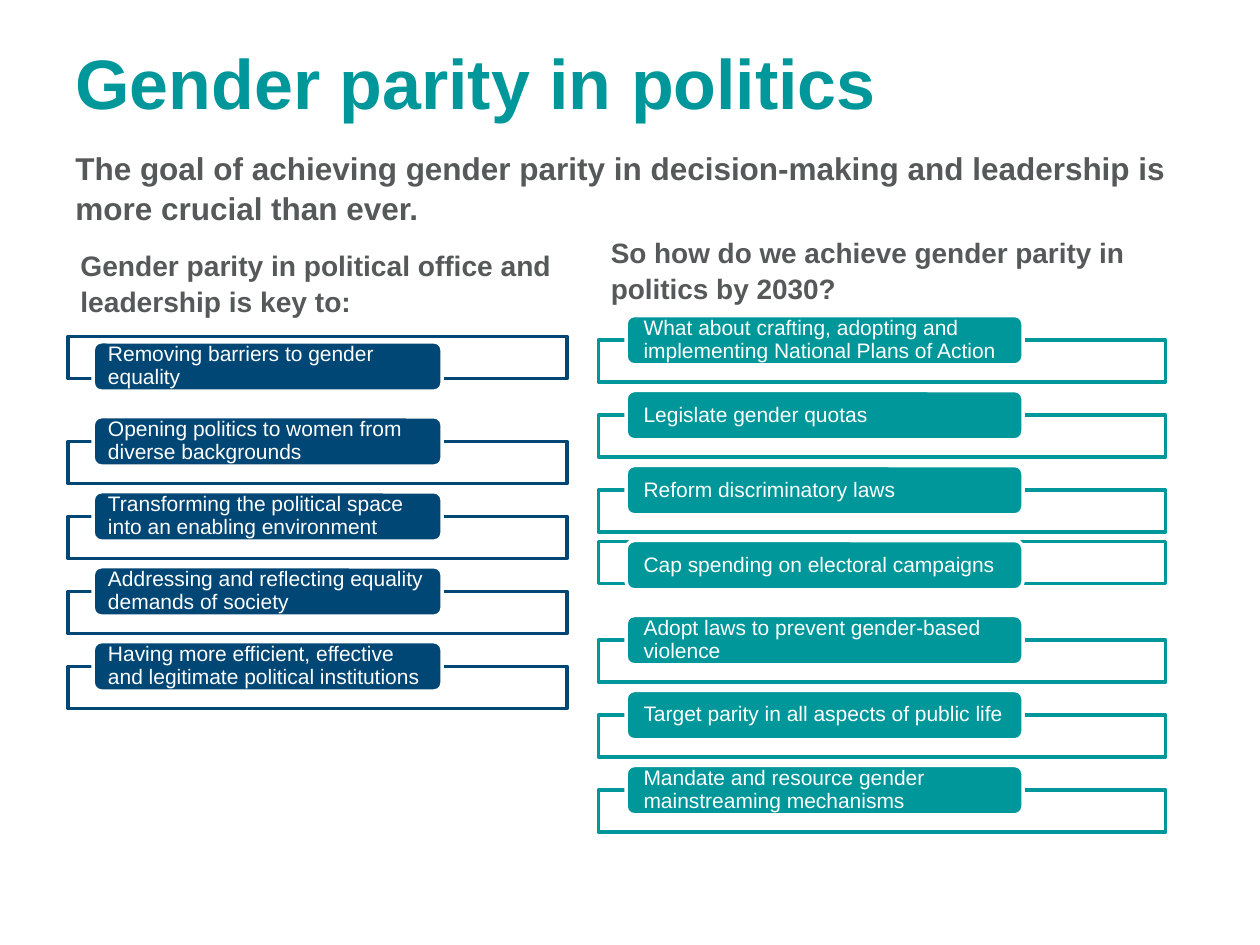
from lxml import etree
from pptx import Presentation
from pptx.dml.color import RGBColor
from pptx.enum.shapes import MSO_SHAPE
from pptx.enum.text import MSO_ANCHOR, PP_ALIGN
from pptx.oxml.ns import qn
from pptx.util import Pt

RECT, ROUNDED = MSO_SHAPE.RECTANGLE, MSO_SHAPE.ROUNDED_RECTANGLE
TOP, MIDDLE = MSO_ANCHOR.TOP, MSO_ANCHOR.MIDDLE
LEFT = PP_ALIGN.LEFT
TEAL = RGBColor(0x00, 0x97, 0x9B)
NAVY = RGBColor(0x00, 0x47, 0x75)
GREY = RGBColor(0x56, 0x59, 0x59)
WHITE = RGBColor(0xFF, 0xFF, 0xFF)


def write(sp, text, size, color, bold=True, anchor=TOP, spacing=1.05, side=7.2, top=3.6, bottom=3.6):
    tf = sp.text_frame
    tf.word_wrap = True
    tf.vertical_anchor = anchor
    tf.margin_left = tf.margin_right = Pt(side)
    tf.margin_top, tf.margin_bottom = Pt(top), Pt(bottom)
    p = tf.paragraphs[0]
    p.alignment = LEFT
    p.line_spacing = spacing
    p.space_before = Pt(0)
    r = p.add_run()
    r.text = text
    r.font.name = "Arial"
    r.font.size = Pt(size)
    r.font.bold = bold
    r.font.color.rgb = color


def add_box(group, kind, x, y, w, h, fill, line):
    sp = group.shapes.add_shape(kind, Pt(x), Pt(y), Pt(w), Pt(h))
    sp.shadow.inherit = False
    sp.fill.solid()
    sp.fill.fore_color.rgb = fill
    sp.line.color.rgb = line
    sp.line.width = Pt(2)
    return sp


prs = Presentation()
prs.slide_width, prs.slide_height = Pt(720), Pt(540)
s = prs.slides.add_slide(prs.slide_layouts[5])

title = s.shapes.title
title.left, title.top, title.width, title.height = Pt(36), Pt(14.4), Pt(648), Pt(104.4)
write(title, "Gender parity in politics", 40, TEAL, top=6)

headings = [
    ("Gender parity in political office and leadership is key to:", 38.9, 137.5, 295.9, 38.2, 16.1, 3.6),
    ("The goal of achieving gender parity in decision-making and leadership is more crucial than ever.",
     36, 58.3, 648, 94.3, 18, 26),
    ("So how do we achieve gender parity in politics by 2030?", 342, 130.3, 360, 46.1, 16, 3.6),
]
for text, x, y, w, h, size, top in headings:
    write(s.shapes.add_textbox(Pt(x), Pt(y), Pt(w), Pt(h)), text, size, GREY, top=top)

PITCH, FRAME_H, PILL_H, FRAME_DROP = 42.85, 24, 28.2, 14.1
columns = [
    (NAVY, 38.9, 285.1, 53.3, 199.4, 195.3, 7.2, {0: -3}, [
        "Removing barriers to gender equality",
        "Opening politics to women from diverse backgrounds",
        "Transforming the political space into an enabling environment",
        "Addressing and reflecting equality demands of society",
        "Having more efficient, effective and legitimate political institutions",
    ]),
    (TEAL, 342, 324, 357.8, 226.8, 180.3, 8.6, {3: 0.7}, [
        "What about crafting, adopting and implementing National Plans of Action",
        "Legislate gender quotas",
        "Reform discriminatory laws",
        "Cap spending on electoral campaigns",
        "Adopt laws to prevent gender-based violence",
        "Target parity in all aspects of public life",
        "Mandate and resource gender mainstreaming mechanisms",
    ]),
]
for color, frame_x, frame_w, pill_x, pill_w, first_y, side, moved_frames, items in columns:
    group = s.shapes.add_group_shape()
    for i, text in enumerate(items):
        y = first_y + i * PITCH
        frame_y = y + moved_frames.get(i, FRAME_DROP)
        frame = add_box(group, RECT, frame_x, frame_y, frame_w, FRAME_H, WHITE, color)
        white = frame.fill._xPr.find(qn("a:solidFill"))[0]
        etree.SubElement(white, qn("a:alpha")).set("val", "90000")
        pill = add_box(group, ROUNDED, pill_x, y, pill_w, PILL_H, color, WHITE)
        write(pill, text, 12, WHITE, bold=False, anchor=MIDDLE, spacing=0.9, side=side, top=0, bottom=0)

prs.save("out.pptx")
